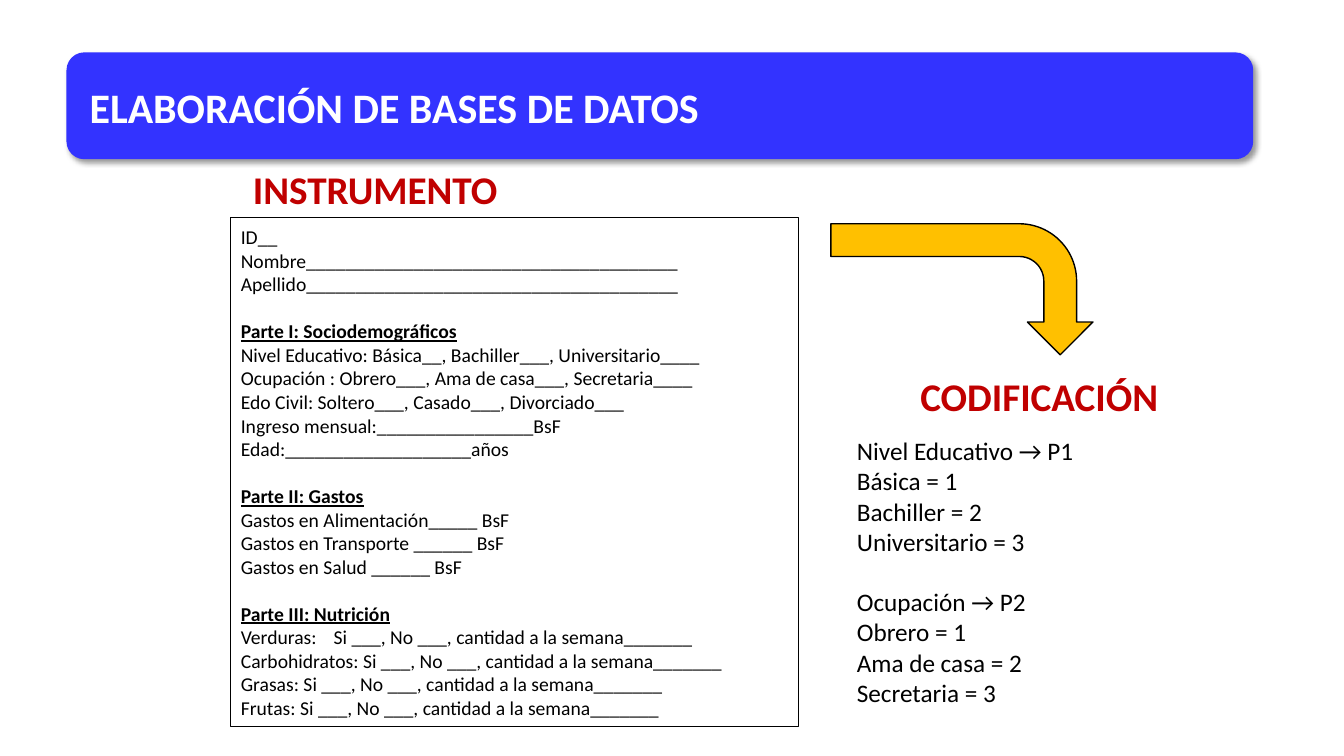
"""Build the slide on turning a questionnaire into coded database variables."""
from dataclasses import dataclass

from lxml.etree import SubElement
from pptx import Presentation
from pptx.dml.color import RGBColor
from pptx.enum.shapes import MSO_SHAPE
from pptx.enum.text import MSO_ANCHOR, PP_ALIGN
from pptx.oxml import parse_xml
from pptx.oxml.ns import nsdecls, qn
from pptx.util import Inches, Pt


@dataclass(frozen=True)
class Theme:
    font: str = "Calibri"
    banner: RGBColor = RGBColor(0x33, 0x33, 0xFF)
    white: RGBColor = RGBColor(0xFF, 0xFF, 0xFF)
    black: RGBColor = RGBColor(0x00, 0x00, 0x00)
    heading: RGBColor = RGBColor(0xC0, 0x00, 0x00)
    arrow: RGBColor = RGBColor(0xFF, 0xC0, 0x00)
    title_size: float = 30
    heading_size: float = 28
    form_size: float = 14
    code_size: float = 18
    line_pitch: float = 1.2


theme = Theme()


def write_sections(shape, sections, size, color, bold=False, underlined_heads=False):
    """Write groups of lines, one line of space between groups."""
    frame = shape.text_frame
    frame.word_wrap = True
    paragraph = frame.paragraphs[0]
    for section_index, section in enumerate(sections):
        for line_index, line in enumerate(section):
            if section_index or line_index:
                paragraph = frame.add_paragraph()
            paragraph.alignment = PP_ALIGN.LEFT
            if section_index and line_index == 0:
                paragraph.space_before = Pt(size * theme.line_pitch)
            if "\t" in line:
                tabs = SubElement(paragraph._p.get_or_add_pPr(), qn("a:tabLst"))
                SubElement(tabs, qn("a:tab"), pos=str(Inches(0.92)), algn="l")
            is_head = underlined_heads and section_index > 0 and line_index == 0
            run = paragraph.add_run()
            run.text = line
            run.font.name = theme.font
            run.font.size = Pt(size)
            run.font.color.rgb = color
            run.font.bold = bold or is_head
            run.font.underline = is_head


presentation = Presentation()
presentation.slide_width = Inches(13.33)
presentation.slide_height = Inches(7.5)
slide = presentation.slides.add_slide(presentation.slide_layouts[6])

banner = slide.shapes.add_shape(
    MSO_SHAPE.ROUNDED_RECTANGLE, Inches(0.66), Inches(0.52), Inches(11.77), Inches(1.06)
)
banner.fill.solid()
banner.fill.fore_color.rgb = theme.banner
banner.line.fill.background()
banner.shadow.inherit = False
banner._element.spPr.find(qn("a:effectLst")).append(parse_xml(
    f'<a:outerShdw {nsdecls("a")} blurRad="{Pt(4)}" dist="{Pt(3)}" dir="2700000" '
    f'algn="tl" rotWithShape="0"><a:srgbClr val="{theme.black}">'
    '<a:alpha val="40000"/></a:srgbClr></a:outerShdw>'
))

headings = [
    ("ELABORACIÓN DE BASES DE DATOS", 0.79, 0.76, 10.98, 0.61, theme.title_size, theme.white),
    ("INSTRUMENTO", 2.41, 1.59, 3.62, 0.57, theme.heading_size, theme.heading),
    ("CODIFICACIÓN", 9.03, 3.64, 2.64, 0.57, theme.heading_size, theme.heading),
]
for text, left, top, width, height, size, color in headings:
    heading = slide.shapes.add_textbox(Inches(left), Inches(top), Inches(width), Inches(height))
    write_sections(heading, [[text]], size, color, bold=True)

questionnaire = slide.shapes.add_shape(
    MSO_SHAPE.RECTANGLE, Inches(2.29), Inches(2.16), Inches(5.63), Inches(5.05)
)
questionnaire.fill.background()
questionnaire.line.color.rgb = theme.black
questionnaire.line.width = Pt(0.75)
questionnaire.shadow.inherit = False
questionnaire.text_frame.vertical_anchor = MSO_ANCHOR.MIDDLE
questions = [
    [
        "ID__",
        "Nombre______________________________________",
        "Apellido______________________________________",
    ],
    [
        "Parte I: Sociodemográficos",
        "Nivel Educativo: Básica__, Bachiller___, Universitario____",
        "Ocupación : Obrero___, Ama de casa___, Secretaria____",
        "Edo Civil: Soltero___, Casado___, Divorciado___",
        "Ingreso mensual:________________BsF",
        "Edad:___________________años",
    ],
    [
        "Parte II: Gastos",
        "Gastos en Alimentación_____ BsF",
        "Gastos en Transporte ______ BsF",
        "Gastos en Salud ______ BsF",
    ],
    ["Parte III: Nutrición"] + [
        f"{food}Si ___, No ___, cantidad a la semana_______"
        for food in ("Verduras:\t", "Carbohidratos: ", "Grasas: ", "Frutas: ")
    ],
]
write_sections(questionnaire, questions, theme.form_size, theme.black, underlined_heads=True)

arrow = slide.shapes.add_shape(
    MSO_SHAPE.BENT_ARROW, Inches(8.89), Inches(1.57), Inches(1.3), Inches(2.6)
)
arrow.rotation = 90
arrow.fill.solid()
arrow.fill.fore_color.rgb = theme.arrow
arrow.line.color.rgb = theme.black
arrow.line.width = Pt(1)
arrow.shadow.inherit = False

codebook = slide.shapes.add_textbox(Inches(8.4), Inches(4.27), Inches(2.91), Inches(2.83))
codes = [
    ["Nivel Educativo → P1", "Básica = 1", "Bachiller = 2", "Universitario = 3"],
    ["Ocupación → P2", "Obrero = 1", "Ama de casa = 2", "Secretaria = 3"],
]
write_sections(codebook, codes, theme.code_size, theme.black)

presentation.save("out.pptx")
